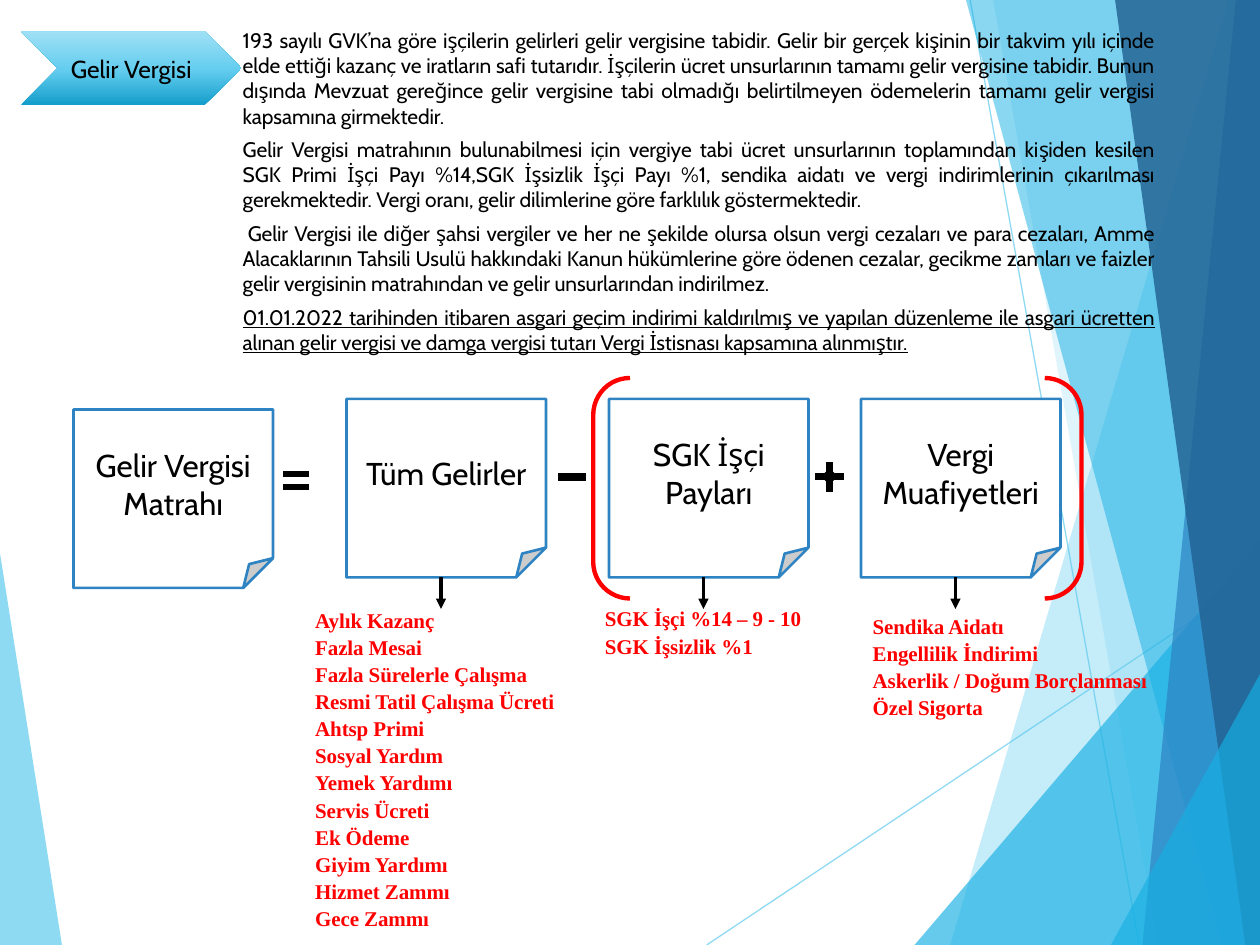
from typing import NamedTuple

from lxml import etree
from pptx import Presentation, util as u
from pptx.dml.color import RGBColor
from pptx.enum import shapes as sh, text as tx
from pptx.oxml import parse_xml
from pptx.oxml.ns import nsdecls, qn

# Grid of 120 columns by 90 rows, twelve to the inch
UNIT = u.Inches(1) / 12
COLS, ROWS = 120, 90
HUES = {"sky": "5FCBEF", "aqua": "17B0E4", "blue": "2E83C3", "navy": "226292",
        "white": "FFFFFF", "black": "000000", "red": "FF0000"}
FADE = [(0, "149ECB"), (48, "64CDEF"), (100, "9FE0F5")]


class Box(NamedTuple):
    col: float
    row: float
    wide: float
    high: float


class Facet(NamedTuple):
    hue: str
    alpha: int
    pts: list


class Card(NamedTuple):
    label: str
    col: float
    row: float


class Sign(NamedTuple):
    kind: sh.MSO_SHAPE
    box: Box


class Items(NamedTuple):
    box: Box
    lines: list


FACETS = [
    Facet("sky", 70, [(0, 52.7), (5.9, ROWS), (0, ROWS)]),
    Facet("sky", 36, [(117, 0), (90.5, ROWS), (COLS, ROWS), (COLS, 0)]),
    Facet("sky", 20, [(94.6, 0), (110.3, ROWS), (COLS, ROWS), (COLS, 0)]),
    Facet("aqua", 66, [(87.1, ROWS), (COLS, 51.5), (COLS, ROWS)]),
    Facet("aqua", 50, [(92, 0), (116.4, ROWS), (COLS, ROWS), (COLS, 0)]),
    Facet("blue", 70, [(117.7, 0), (108.8, ROWS), (COLS, ROWS), (COLS, 0)]),
    Facet("navy", 82, [(106.2, 0), (118.6, ROWS), (COLS, ROWS), (COLS, 0)]),
    Facet("aqua", 66, [(105.8, ROWS), (COLS, 64.2), (COLS, ROWS)]),
]
RAYS = [((67.3, ROWS), (COLS, 54.8)), ((92.4, 0), (108.5, ROWS))]

CARD_W, CARD_H = 19, 17
CARDS = [Card("Gelir Vergisi Matrahı", 7, 39), Card("Tüm Gelirler", 33, 38),
         Card("SGK İşçi Payları", 58, 38), Card("Vergi Muafiyetleri", 82, 38)]
SIGNS = [Sign(sh.MSO_SHAPE.MATH_EQUAL, Box(26.4, 44, 3.6, 3.5)),
         Sign(sh.MSO_SHAPE.MATH_MINUS, Box(52.5, 43.3, 4, 4.2)),
         Sign(sh.MSO_SHAPE.MATH_PLUS, Box(77, 43.3, 4, 4.2))]
LISTS = [
    Items(Box(29.9, 57.7, 23.5, 31.1),
          ["Aylık Kazanç", "Fazla Mesai", "Fazla Sürelerle Çalışma",
           "Resmi Tatil Çalışma Ücreti", "Ahtsp Primi", "Sosyal Yardım",
           "Yemek Yardımı", "Servis Ücreti", "Ek Ödeme", "Giyim Yardımı",
           "Hizmet Zammı", "Gece Zammı"]),
    Items(Box(57.5, 57.6, 23.5, 7.7), ["SGK İşçi %14 – 9 - 10", "SGK İşsizlik %1"]),
    Items(Box(83, 58.3, 30, 13.3),
          ["Sendika Aidatı", "Engellilik İndirimi", "Askerlik / Doğum Borçlanması",
           "Özel Sigorta"]),
]
BODY = [
    "193 sayılı GVK’na göre işçilerin gelirleri gelir vergisine tabidir. Gelir bir gerçek "
    "kişinin bir takvim yılı içinde elde ettiği kazanç ve iratların safi tutarıdır. "
    "İşçilerin ücret unsurlarının tamamı gelir vergisine tabidir. Bunun dışında Mevzuat "
    "gereğince gelir vergisine tabi olmadığı belirtilmeyen ödemelerin tamamı gelir vergisi "
    "kapsamına girmektedir.",
    "Gelir Vergisi matrahının bulunabilmesi için vergiye tabi ücret unsurlarının "
    "toplamından kişiden kesilen SGK Primi İşçi Payı %14,SGK İşsizlik İşçi Payı %1, sendika "
    "aidatı ve vergi indirimlerinin çıkarılması gerekmektedir. Vergi oranı, gelir "
    "dilimlerine göre farklılık göstermektedir.",
    "Gelir Vergisi ile diğer şahsi vergiler ve her ne şekilde olursa olsun vergi cezaları "
    "ve para cezaları, Amme Alacaklarının Tahsili Usulü hakkındaki Kanun hükümlerine göre "
    "ödenen cezalar, gecikme zamları ve faizler gelir vergisinin matrahından ve gelir "
    "unsurlarından indirilmez.",
    "01.01.2022 tarihinden itibaren asgari geçim indirimi kaldırılmış ve yapılan düzenleme "
    "ile asgari ücretten alınan gelir vergisi ve damga vergisi tutarı Vergi İstisnası "
    "kapsamına alınmıştır.",
]


def emu(*vals: float) -> list:
    return [u.Emu(round(v * UNIT)) for v in vals]


def rgb(hue: str) -> RGBColor:
    return RGBColor.from_string(HUES[hue])


def fade(fill, alpha: int) -> None:
    """Set the opacity, in percent, of a solid fill's colour element."""
    for tone in fill.iter(qn("a:srgbClr")):
        etree.SubElement(tone, qn("a:alpha")).set("val", str(alpha * 1000))


def style(shape, fill: str = "", line: str = "", width: float = 1.5) -> None:
    shape.shadow.inherit = False
    if fill:
        shape.fill.solid()
        shape.fill.fore_color.rgb = rgb(fill)
    else:
        shape.fill.background()
    if line:
        shape.line.color.rgb = rgb(line)
        shape.line.width = u.Pt(width)
    else:
        shape.line.fill.background()


def write(para, words: str, hue: str = "black", **look) -> None:
    run = para.add_run()
    run.text = words
    for key, val in look.items():
        setattr(run.font, key, val)
    run.font.color.rgb = rgb(hue)


def label(shape, words: str, size: int) -> None:
    shape.text_frame.vertical_anchor = tx.MSO_ANCHOR.MIDDLE
    para = shape.text_frame.paragraphs[0]
    para.alignment = tx.PP_ALIGN.CENTER
    write(para, words, name="Cabin", size=u.Pt(size))


def stroke(tree, start: tuple, end: tuple, hue: str, width: float):
    link = tree.add_connector(sh.MSO_CONNECTOR.STRAIGHT, *emu(*start, *end))
    link.line.color.rgb = rgb(hue)
    link.line.width = u.Pt(width)
    etree.SubElement(link.element.spPr, qn("a:effectLst"))
    return link


def prose(tree, box: Box, lines: list, gap: float, **look) -> list:
    """Add a justified text box and return its paragraphs."""
    frame = tree.add_textbox(*emu(*box)).text_frame
    form = {"word_wrap": True, "margin_left": 0, "margin_right": 0,
            "margin_top": u.Inches(0.01), "margin_bottom": 0,
            "auto_size": tx.MSO_AUTO_SIZE.SHAPE_TO_FIT_TEXT}
    for key, val in form.items():
        setattr(frame, key, val)
    for i, line in enumerate(lines):
        para = frame.add_paragraph() if i else frame.paragraphs[0]
        para.alignment = tx.PP_ALIGN.JUSTIFY
        para.space_before = u.Pt(gap if i else 1.1)
        props = para._p.get_or_add_pPr()
        props.set("marL", str(u.Inches(0.01)))
        props.set("indent", "0")
        write(para, line, **look)
        para.runs[0].font._element.set("spc", "-5")
    return list(frame.paragraphs)


def backdrop(tree) -> None:
    for facet in FACETS:
        first, *rest = [tuple(emu(*pt)) for pt in facet.pts]
        pen = tree.build_freeform(*first)
        pen.add_line_segments(rest, close=True)
        shape = pen.convert_to_shape()
        style(shape, facet.hue)
        fade(shape.element.spPr, facet.alpha)
        if facet is FACETS[0]:
            for start, end in RAYS:
                fade(stroke(tree, start, end, "sky", 0.75).element.spPr, 70)


def banner(tree) -> None:
    shape = tree.add_shape(sh.MSO_SHAPE.CHEVRON, *emu(2, 3, 21, 7))
    style(shape)
    stops = "".join(f'<a:gs pos="{pos * 1000}"><a:srgbClr val="{tone}"/></a:gs>'
                    for pos, tone in FADE)
    grad = parse_xml(f'<a:gradFill {nsdecls("a")}><a:gsLst>{stops}</a:gsLst>'
                     '<a:lin ang="16200000" scaled="0"/></a:gradFill>')
    props = shape.element.spPr
    props.replace(props.find(qn("a:noFill")), grad)
    label(shape, "Gelir Vergisi", 14)


def main() -> None:
    deck = Presentation()
    deck.slide_width, deck.slide_height = emu(COLS, ROWS)
    tree = deck.slides.add_slide(deck.slide_layouts[6]).shapes

    # Background facets, heading and explanation
    backdrop(tree)
    banner(tree)
    paras = prose(tree, Box(23, 2.5, 87, 31.7), BODY, 4.8, name="Cabin", size=u.Pt(12))
    paras[2]._p.pPr.set("indent", str(u.Inches(0.04)))
    paras[3].runs[0].font.underline = True

    # Formula cards and signs
    for card in CARDS:
        shape = tree.add_shape(sh.MSO_SHAPE.FOLDED_CORNER,
                               *emu(card.col, card.row, CARD_W, CARD_H))
        style(shape, "white", "blue")
        label(shape, card.label, 18)
    for sign in SIGNS:
        style(tree.add_shape(sign.kind, *emu(*sign.box)), "black", "white")
    style(tree.add_shape(sh.MSO_SHAPE.DOUBLE_BRACKET, *emu(56.5, 36, 46.5, 21)),
          line="red", width=2.5)

    # Arrows down to the item lists
    for card, items in zip(CARDS[1:], LISTS):
        col, row = card.col + 9, card.row + CARD_H
        link = stroke(tree, (col, row), (col, row + 3), "black", 1.75)
        etree.SubElement(link.line._get_or_add_ln(), qn("a:tailEnd")).set("type", "triangle")
        prose(tree, items.box, items.lines, 1.1, hue="red", name="Times New Roman",
              size=u.Pt(12), bold=True)

    deck.save("out.pptx")


if __name__ == "__main__":
    main()
